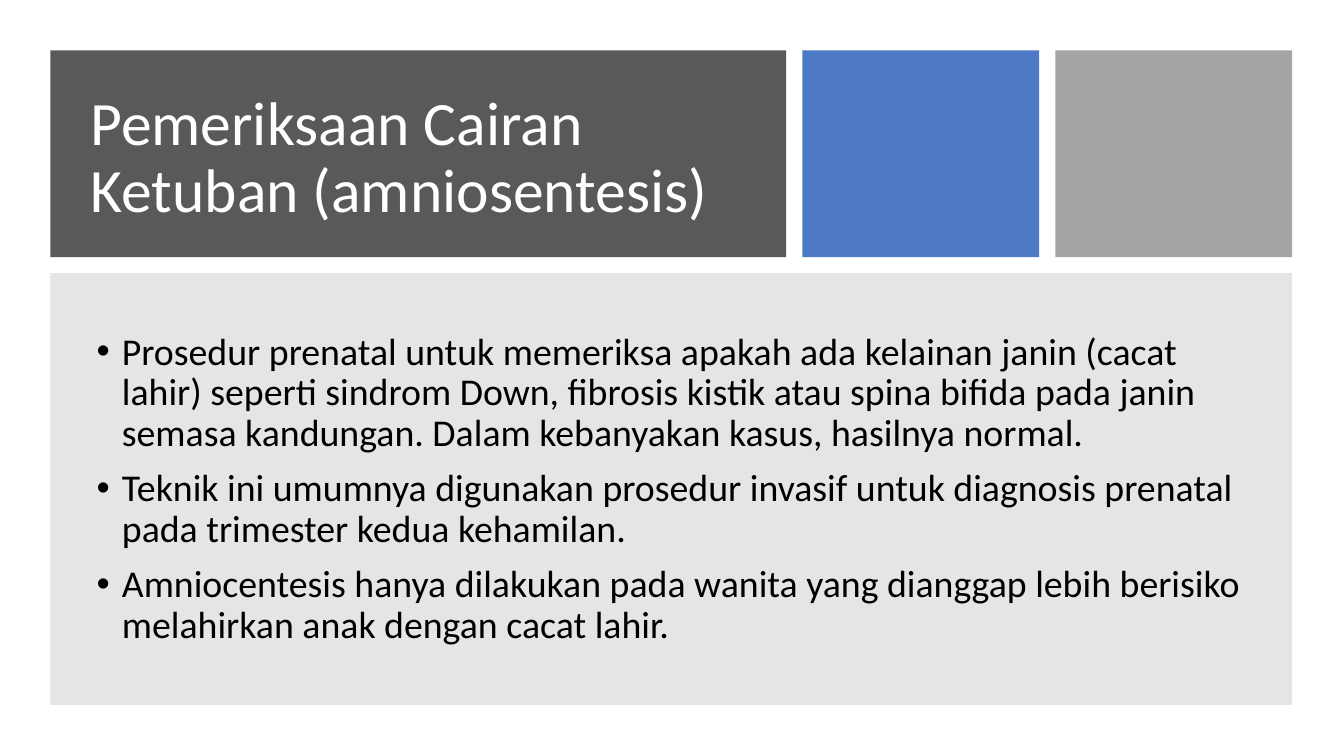
from lxml import etree
from pptx import Presentation
from pptx.dml.color import RGBColor
from pptx.enum.shapes import MSO_SHAPE
from pptx.enum.text import MSO_ANCHOR, PP_ALIGN
from pptx.oxml.ns import qn
from pptx.util import Pt

FONT = "Calibri"
WHITE = RGBColor(0xFF, 0xFF, 0xFF)
BLACK = RGBColor(0x00, 0x00, 0x00)
DARK_GREY = RGBColor(0x59, 0x59, 0x59)
BLUE = RGBColor(0x44, 0x72, 0xC4)
LIGHT_GREY = RGBColor(0xA5, 0xA5, 0xA5)
PANEL_GREY = RGBColor(0x80, 0x80, 0x80)

# Panel grid
MARGIN = 36
GAP = 11.5
TITLE_WIDTH = 525.6
ACCENT_WIDTH = 169.2
HEADER_HEIGHT = 147.6
BODY_HEIGHT = 308.4

TITLE = "Pemeriksaan Cairan Ketuban (amniosentesis)"
POINTS = [
    "Prosedur prenatal untuk memeriksa apakah ada kelainan janin (cacat lahir) "
    "seperti sindrom Down, fibrosis kistik atau spina bifida pada janin semasa "
    "kandungan. Dalam kebanyakan kasus, hasilnya normal.",
    "Teknik ini umumnya digunakan prosedur invasif untuk diagnosis prenatal "
    "pada trimester kedua kehamilan.",
    "Amniocentesis hanya dilakukan pada wanita yang dianggap lebih berisiko "
    "melahirkan anak dengan cacat lahir.",
]


def add_panel(slide, left, top, width, height, color, opacity=100):
    shape = slide.shapes.add_shape(
        MSO_SHAPE.RECTANGLE, Pt(left), Pt(top), Pt(width), Pt(height))
    shape.shadow.inherit = False
    shape.line.fill.background()
    shape.fill.solid()
    shape.fill.fore_color.rgb = color
    if opacity < 100:
        color_element = shape.fill._xPr.find(".//" + qn("a:srgbClr"))
        etree.SubElement(color_element, qn("a:alpha"), val=str(opacity * 1000))


def add_bullet(paragraph):
    properties = paragraph._p.get_or_add_pPr()
    properties.set("marL", str(Pt(18)))
    properties.set("indent", str(-Pt(18)))
    etree.SubElement(properties, qn("a:buFont"), typeface="Arial")
    etree.SubElement(properties, qn("a:buChar"), char="•")


def add_text(slide, left, top, width, height, texts, size, color, bulleted=False):
    box = slide.shapes.add_textbox(Pt(left), Pt(top), Pt(width), Pt(height))
    frame = box.text_frame
    frame.word_wrap = True
    frame.vertical_anchor = MSO_ANCHOR.MIDDLE
    for index, text in enumerate(texts):
        paragraph = frame.add_paragraph() if index else frame.paragraphs[0]
        paragraph.text = text
        if bulleted:
            add_bullet(paragraph)
        paragraph.alignment = PP_ALIGN.LEFT
        paragraph.line_spacing = 0.9
        paragraph.space_before = Pt(10 if index else 0)
        paragraph.font.name = FONT
        paragraph.font.size = Pt(size)
        paragraph.font.color.rgb = color


def main():
    presentation = Presentation()
    presentation.slide_width = Pt(960)
    presentation.slide_height = Pt(540)
    slide = presentation.slides.add_slide(presentation.slide_layouts[6])

    # Header row: title panel and two accent blocks
    header_panels = [(TITLE_WIDTH, DARK_GREY, 100),
                     (ACCENT_WIDTH, BLUE, 95),
                     (ACCENT_WIDTH, LIGHT_GREY, 100)]
    left = MARGIN
    for width, color, opacity in header_panels:
        add_panel(slide, left, MARGIN, width, HEADER_HEIGHT, color, opacity)
        left += width + GAP
    add_text(slide, 57.6, 57.6, 479.5, 112.3, [TITLE], 44, WHITE)

    # Body panel with bullet points
    body_width = left - GAP - MARGIN
    body_top = MARGIN + HEADER_HEIGHT + GAP
    add_panel(slide, MARGIN, body_top, body_width, BODY_HEIGHT, PANEL_GREY, 20)
    add_text(slide, 62, 220.3, 834.5, 258.5, POINTS, 27, BLACK, bulleted=True)

    presentation.save("out.pptx")


if __name__ == "__main__":
    main()
